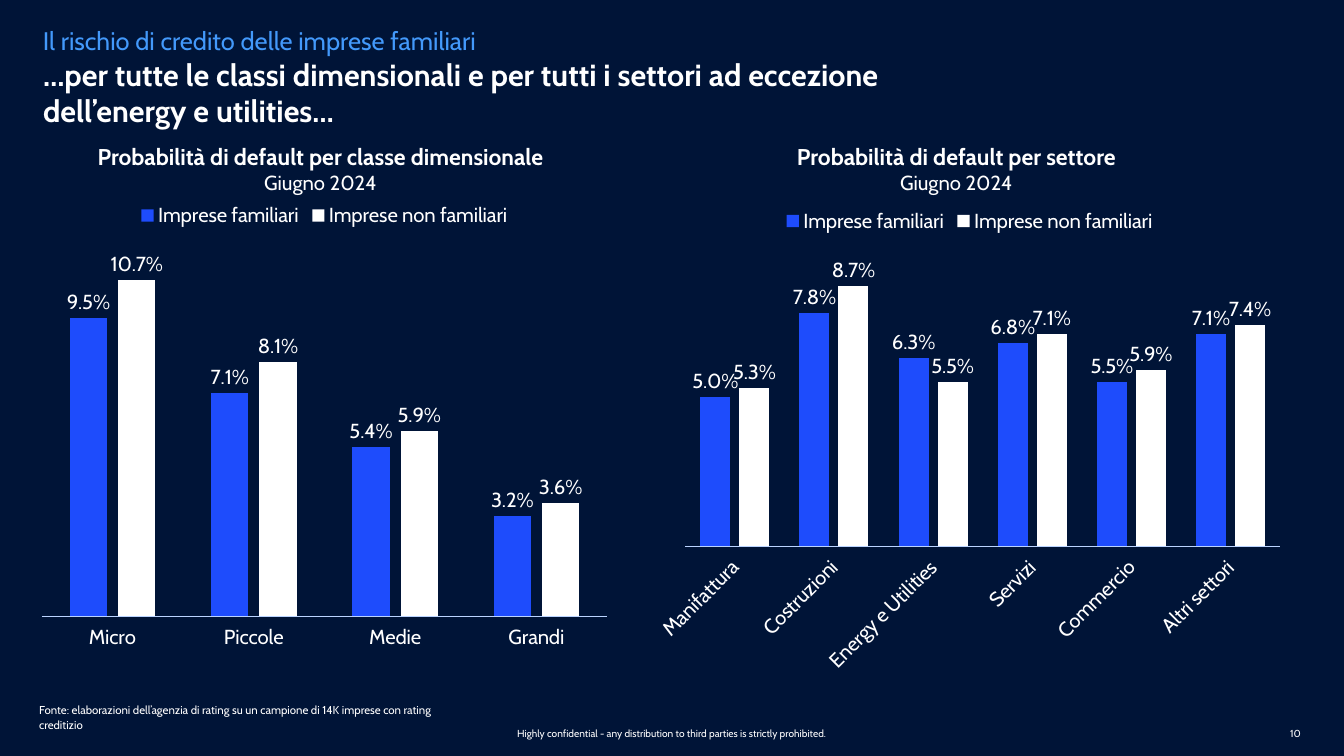
from lxml.etree import SubElement
from pptx import Presentation
from pptx.chart.data import CategoryChartData
from pptx.dml.color import RGBColor
from pptx.enum.chart import (XL_CHART_TYPE, XL_LABEL_POSITION, XL_LEGEND_POSITION,
                             XL_TICK_LABEL_POSITION, XL_TICK_MARK)
from pptx.enum.text import MSO_ANCHOR, MSO_AUTO_SIZE, PP_ALIGN
from pptx.oxml.ns import qn
from pptx.util import Inches, Pt

NAVY = RGBColor(0x00, 0x14, 0x37)
WHITE = RGBColor(0xFF, 0xFF, 0xFF)
SKY = RGBColor(0x43, 0x99, 0xFB)
BLUE = RGBColor(0x1E, 0x4C, 0xFC)
PALE_BLUE = RGBColor(0xBB, 0xD4, 0xFF)
FONT = "Cabin"
CHART_SIZE = 16
SERIES_NAMES = ("Imprese familiari", "Imprese non familiari")


class RiskSlide:
    """Holds the style and the slide; boxes are percentages of its size."""

    def __init__(self, presentation):
        self.width = presentation.slide_width
        self.height = presentation.slide_height
        self.slide = presentation.slides.add_slide(presentation.slide_layouts[5])
        self.slide.background.fill.solid()
        self.slide.background.fill.fore_color.rgb = NAVY

    def place(self, box):
        left, top, width, height = box
        return (int(self.width * left / 100), int(self.height * top / 100),
                int(self.width * width / 100), int(self.height * height / 100))

    def style_font(self, font, size, color=WHITE, bold=False):
        font.name = FONT
        font.size = Pt(size)
        font.bold = bold
        font.color.rgb = color

    def fill_frame(self, frame, lines, align, anchor, inset, spacing=1.0, after=0):
        """Each line is (text, size, color, bold)."""
        frame.word_wrap = True
        frame.auto_size = MSO_AUTO_SIZE.NONE
        frame.vertical_anchor = anchor
        frame.margin_left = frame.margin_right = Inches(inset)
        frame.margin_top = frame.margin_bottom = Inches(inset / 2)
        for index, (text, *style) in enumerate(lines):
            paragraph = frame.add_paragraph() if index else frame.paragraphs[0]
            paragraph.text = text
            paragraph.alignment = align
            paragraph.line_spacing = spacing
            paragraph.space_after = Pt(after)
            self.style_font(paragraph.font, *style)

    def title(self, box, text):
        shape = self.slide.shapes.title
        shape.left, shape.top, shape.width, shape.height = self.place(box)
        self.fill_frame(shape.text_frame, [(text, 24, WHITE, True)],
                        PP_ALIGN.LEFT, MSO_ANCHOR.TOP, 0)

    def text(self, box, lines, align=PP_ALIGN.LEFT, anchor=MSO_ANCHOR.TOP,
             inset=0.0, spacing=1.0, after=0):
        shape = self.slide.shapes.add_textbox(*self.place(box))
        self.fill_frame(shape.text_frame, lines, align, anchor, inset, spacing, after)

    def chart_heading(self, box, text):
        self.text(box, [(text, 18, WHITE, True), ("Giugno 2024", 16, WHITE, False)],
                  PP_ALIGN.CENTER, inset=0.1)

    def column_chart(self, box, categories, values, maximum, gap, plot_area, rotation=0):
        data = CategoryChartData(number_format="0.0%")
        data.categories = categories
        for name, series_values in zip(SERIES_NAMES, values):
            data.add_series(name, series_values)
        chart = self.slide.shapes.add_chart(
            XL_CHART_TYPE.COLUMN_CLUSTERED, *self.place(box), data).chart
        chart.has_title = False
        self.style_font(chart.font, CHART_SIZE)

        # Legend
        chart.has_legend = True
        chart.legend.position = XL_LEGEND_POSITION.TOP
        chart.legend.include_in_layout = False
        self.style_font(chart.legend.font, CHART_SIZE)

        # Axes
        value_axis = chart.value_axis
        value_axis.visible = False
        value_axis.has_major_gridlines = False
        value_axis.minimum_scale = 0
        value_axis.maximum_scale = maximum
        category_axis = chart.category_axis
        category_axis.major_tick_mark = XL_TICK_MARK.NONE
        category_axis.tick_label_position = XL_TICK_LABEL_POSITION.LOW
        category_axis.format.line.color.rgb = PALE_BLUE
        category_axis.format.line.width = Pt(0.75)
        self.style_font(category_axis.tick_labels.font, CHART_SIZE)
        label_body = category_axis._element.find(qn("c:txPr")).find(qn("a:bodyPr"))
        label_body.set("rot", str(rotation * 60000))
        label_body.set("vert", "horz")

        # Columns and their labels
        plot = chart.plots[0]
        plot.vary_by_categories = False
        plot.gap_width = gap
        plot.overlap = -30
        for series, color in zip(plot.series, (BLUE, WHITE)):
            series.format.fill.solid()
            series.format.fill.fore_color.rgb = color
            series.invert_if_negative = False
            labels = series.data_labels
            labels.show_value = True
            labels.number_format = "0.0%"
            labels.number_format_is_linked = False
            labels.position = XL_LABEL_POSITION.OUTSIDE_END
            self.style_font(labels.font, CHART_SIZE)
        self.set_plot_area(chart, plot_area)

    def set_plot_area(self, chart, shares):
        """Place the inner plot area by shares of the chart: x, y, w, h."""
        area = chart._chartSpace.chart.plotArea
        layout = area.find(qn("c:layout"))
        if layout is None:
            layout = SubElement(area, qn("c:layout"))
            area.insert(0, layout)
        manual = SubElement(layout, qn("c:manualLayout"))
        settings = [("layoutTarget", "inner"), ("xMode", "edge"), ("yMode", "edge"),
                    *zip("xywh", shares)]
        for tag, value in settings:
            SubElement(manual, qn(f"c:{tag}")).set("val", str(value))


def main():
    presentation = Presentation()
    presentation.slide_width = Inches(14.7)
    presentation.slide_height = Inches(8.27)
    page = RiskSlide(presentation)

    # Titles
    page.text((3.2, 3.39, 66.94, 3.99),
              [("Il rischio di credito delle imprese familiari", 20, SKY)],
              anchor=MSO_ANCHOR.BOTTOM, spacing=1.1, after=6)
    page.title((3.2, 7.38, 66.94, 4.23),
               "…per tutte le classi dimensionali e per tutti i settori "
               "ad eccezione dell’energy e utilities…")

    # Default probability by company size
    page.column_chart((2.24, 25.51, 43.81, 61.55),
                      ("Micro", "Piccole", "Medie", "Grandi"),
                      ((0.095, 0.071, 0.054, 0.032), (0.107, 0.081, 0.059, 0.036)),
                      maximum=0.12, gap=150, plot_area=(0.02, 0.1, 0.96, 0.81))
    page.chart_heading((3.61, 18.26, 40.48, 8.1),
                       "Probabilità di default per classe dimensionale")

    # Default probability by sector
    page.column_chart((48.1, 26.24, 48.1, 63.97),
                      ("Manifattura", "Costruzioni", "Energy e Utilities",
                       "Servizi", "Commercio", "Altri settori"),
                      ((0.05, 0.078, 0.063, 0.068, 0.055, 0.071),
                       (0.053, 0.087, 0.055, 0.071, 0.059, 0.074)),
                      maximum=0.1, gap=100, plot_area=(0.06, 0.1, 0.92, 0.62),
                      rotation=-45)
    page.chart_heading((48.1, 18.26, 46.12, 8.1), "Probabilità di default per settore")

    # Source and footer
    page.text((2.24, 92.26, 33.4, 5.2),
              [("Fonte: elaborazioni dell’agenzia di rating su un campione di 14K "
                "imprese con rating creditizio", 9)],
              inset=0.1, spacing=1.1, after=6)
    footer = {"anchor": MSO_ANCHOR.MIDDLE, "spacing": 0.9}
    page.text((23.74, 96.49, 52.52, 1.33),
              [("Highly confidential - any distribution to third parties "
                "is strictly prohibited.", 8)], PP_ALIGN.CENTER, **footer)
    page.text((91.77, 96.49, 5.03, 1.33), [("10", 8)], PP_ALIGN.RIGHT, **footer)

    presentation.save("out.pptx")


if __name__ == "__main__":
    main()
